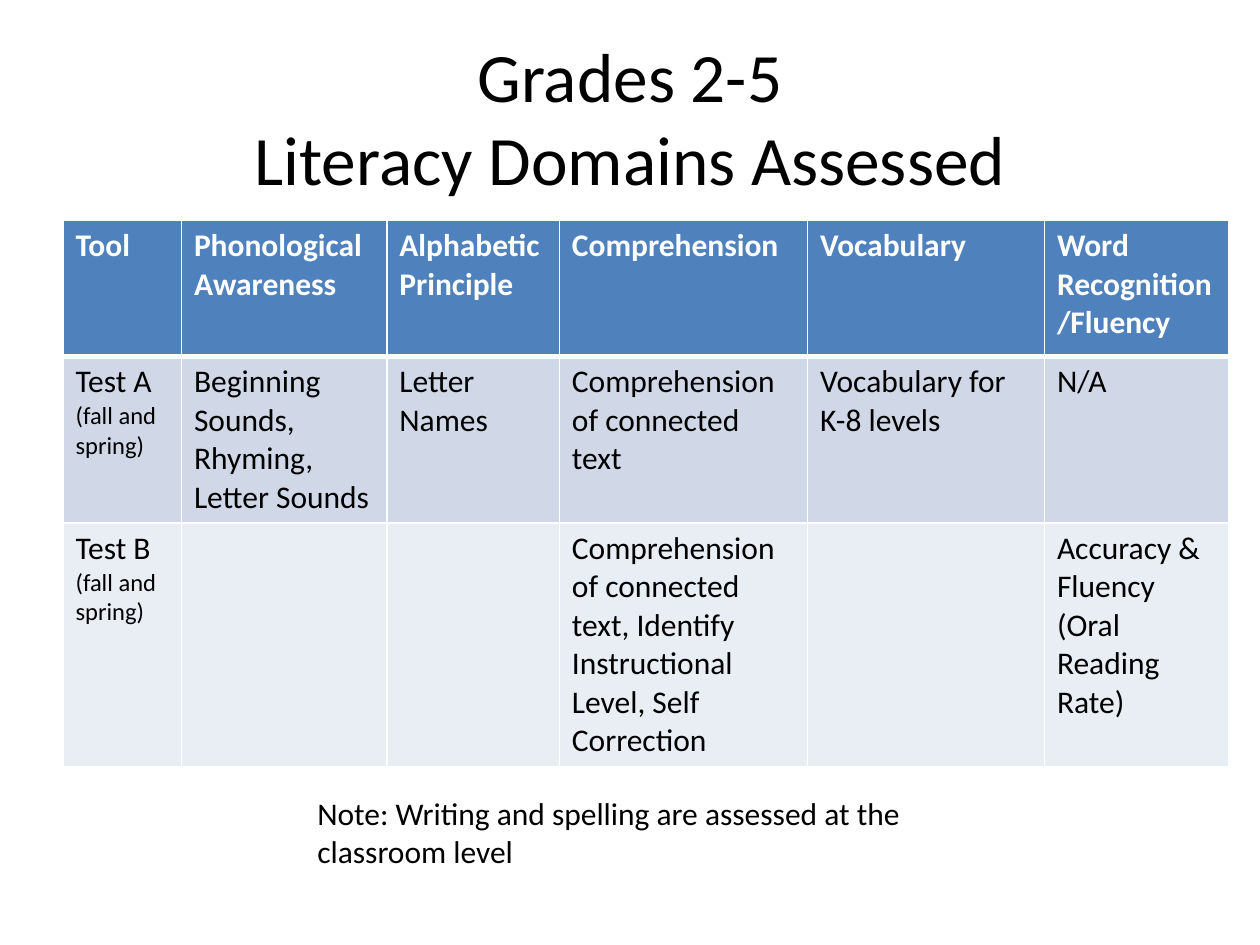
from lxml import etree
from pptx import Presentation
from pptx.dml.color import RGBColor
from pptx.enum.text import MSO_ANCHOR, MSO_AUTO_SIZE, PP_ALIGN
from pptx.oxml.ns import qn
from pptx.util import Inches, Pt

CENTER = PP_ALIGN.CENTER
MIDDLE = MSO_ANCHOR.MIDDLE
NO_FIT = MSO_AUTO_SIZE.NONE
GROW = MSO_AUTO_SIZE.SHAPE_TO_FIT_TEXT

BLACK = RGBColor(0x00, 0x00, 0x00)
WHITE = RGBColor(0xFF, 0xFF, 0xFF)
HEADER_BLUE = RGBColor(0x4F, 0x81, 0xBD)
BAND_DARK = RGBColor(0xD0, 0xD8, 0xE8)
BAND_LIGHT = RGBColor(0xE9, 0xED, 0xF4)

FONT = "Calibri"
TITLE_SIZE = 39.6
BODY_SIZE = 18
DETAIL_SIZE = 14

TITLE = "Grades 2-5\vLiteracy Domains Assessed"
NOTE = "Note: Writing and spelling are assessed at the classroom level"
DOMAINS = [
    ["Tool", "Phonological Awareness", "Alphabetic Principle",
     "Comprehension", "Vocabulary", "Word Recognition/Fluency"],
    ["Test A\n(fall and spring)", "Beginning Sounds, Rhyming, Letter Sounds",
     "Letter Names", "Comprehension of connected text",
     "Vocabulary for K-8 levels", "N/A"],
    ["Test B\n(fall and spring)", "", "",
     "Comprehension of connected text, Identify Instructional Level, "
     "Self Correction", "", "Accuracy & Fluency (Oral Reading Rate)"],
]
COLUMN_WIDTHS = [0.94, 1.63, 1.37, 1.97, 1.88, 1.46]
ROW_HEIGHTS = [1.08, 0.75, 0.75]
ROW_FILLS = [HEADER_BLUE, BAND_DARK, BAND_LIGHT]


class LiteracySlide:
    """Holds the slide and its text style, and adds each kind of element."""

    def __init__(self, slide, font):
        self.slide = slide
        self.font = font

    def style(self, paragraph, size, color=BLACK, bold=False):
        for run in paragraph.runs:
            run.font.name = self.font
            run.font.size = Pt(size)
            run.font.color.rgb = color
            run.font.bold = bold

    def title(self, text, left, top, width, height):
        heading = self.slide.shapes.title
        heading.left, heading.top = Inches(left), Inches(top)
        heading.width, heading.height = Inches(width), Inches(height)
        frame = heading.text_frame
        frame.text = text
        frame.auto_size = NO_FIT
        frame.vertical_anchor = MIDDLE
        paragraph = frame.paragraphs[0]
        paragraph.alignment = CENTER
        self.style(paragraph, TITLE_SIZE)
        for line_break in paragraph._p.findall(qn("a:br")):
            etree.SubElement(line_break, qn("a:rPr"), sz=str(round(TITLE_SIZE * 100)))

    def border(self, cell, side, points):
        line = etree.SubElement(cell._tc.get_or_add_tcPr(), qn(f"a:{side}"),
                                w=str(Pt(points)))
        fill = etree.SubElement(line, qn("a:solidFill"))
        etree.SubElement(fill, qn("a:srgbClr"), val=str(WHITE))

    def cell(self, cell, text, fill, is_header, top_line, bottom_line):
        for side, points in (("lnL", 1), ("lnR", 1),
                             ("lnT", top_line), ("lnB", bottom_line)):
            self.border(cell, side, points)
        cell.fill.solid()
        cell.fill.fore_color.rgb = fill
        cell.text_frame.text = text
        for index, paragraph in enumerate(cell.text_frame.paragraphs):
            size = DETAIL_SIZE if index else BODY_SIZE
            self.style(paragraph, size, WHITE if is_header else BLACK, is_header)

    def table(self, rows, left, top, width, height):
        frame = self.slide.shapes.add_table(
            len(rows), len(rows[0]), Inches(left), Inches(top),
            Inches(width), Inches(height))
        grid = frame.table
        for column, column_width in zip(grid.columns, COLUMN_WIDTHS):
            column.width = Inches(column_width)
        for row, row_height in zip(grid.rows, ROW_HEIGHTS):
            row.height = Inches(row_height)
        frame.height = Inches(height)
        for r, (texts, fill) in enumerate(zip(rows, ROW_FILLS)):
            for c, text in enumerate(texts):
                self.cell(grid.cell(r, c), text, fill, r == 0,
                          3 if r == 1 else 1, 3 if r == 0 else 1)

    def note(self, text, left, top, width, height):
        box = self.slide.shapes.add_textbox(
            Inches(left), Inches(top), Inches(width), Inches(height))
        frame = box.text_frame
        frame.word_wrap = True
        frame.auto_size = GROW
        frame.text = text
        self.style(frame.paragraphs[0], BODY_SIZE)


def main():
    deck = Presentation()
    deck.slide_width, deck.slide_height = Inches(10), Inches(7.5)
    page = LiteracySlide(deck.slides.add_slide(deck.slide_layouts[5]), FONT)
    page.title(TITLE, 0.5, 0.3, 9, 1.25)
    page.table(DOMAINS, 0.5, 1.75, 9.25, 4.28)
    page.note(NOTE, 2.42, 6.25, 5, 0.71)
    deck.save("out.pptx")


if __name__ == "__main__":
    main()
